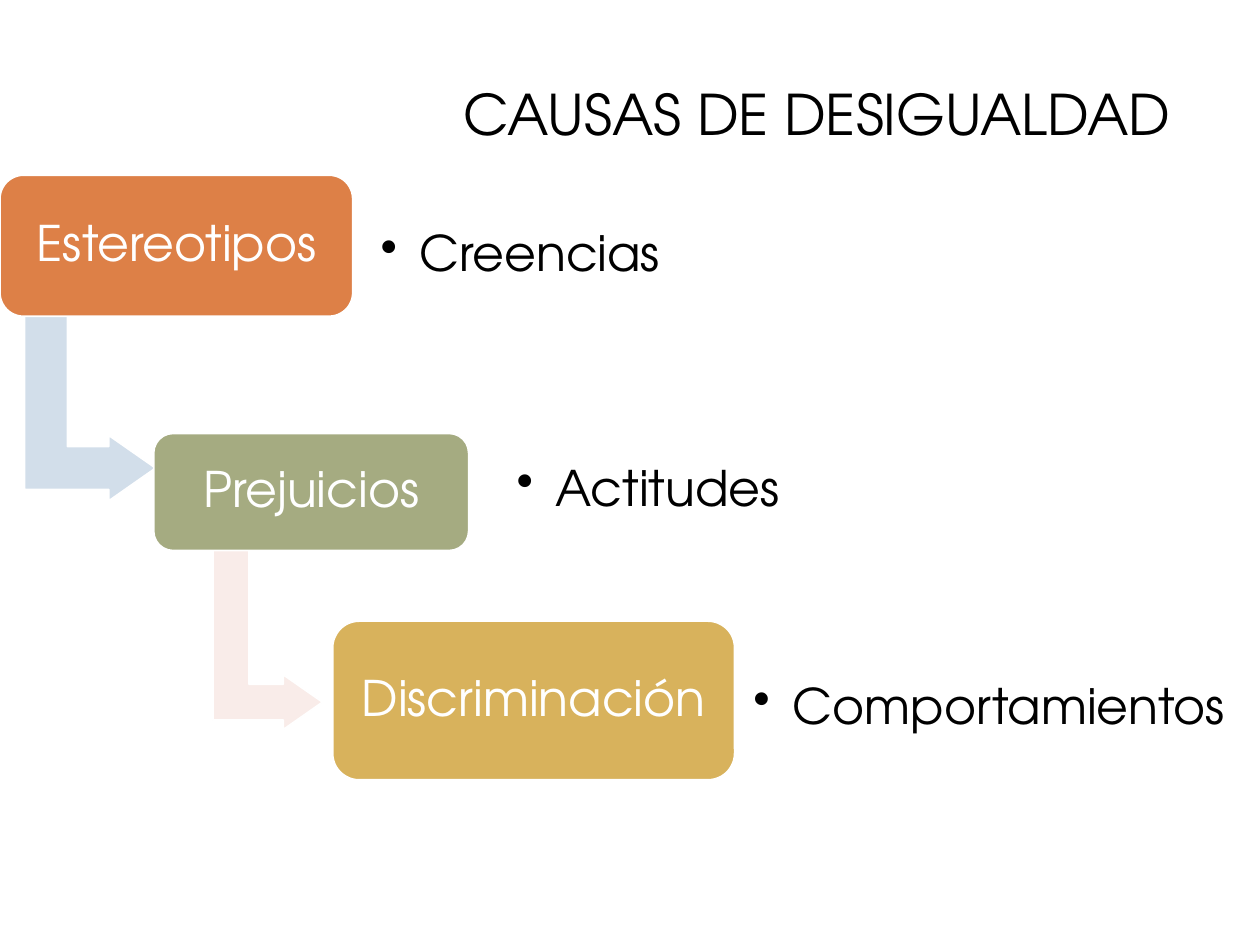
import pptx
import pptx.util
from pptx.dml.color import RGBColor
from pptx.enum.shapes import MSO_SHAPE
from pptx.enum.text import MSO_ANCHOR, PP_ALIGN
from pptx.oxml.xmlchemy import OxmlElement

Inches = pptx.util.Inches
Pt = pptx.util.Pt

FONT = "TeX Gyre Adventor"
BLACK = RGBColor(0x00, 0x00, 0x00)
WHITE = RGBColor(0xFF, 0xFF, 0xFF)
ORANGE = RGBColor(0xDD, 0x80, 0x47)
GREEN = RGBColor(0xA5, 0xAB, 0x81)
GOLD = RGBColor(0xD8, 0xB2, 0x5C)
PALE_BLUE = RGBColor(0xD2, 0xDE, 0xEA)
PALE_PINK = RGBColor(0xF9, 0xEC, 0xE9)

# Content: places are left, top, width, height in inches
TITLE = ("CAUSAS DE DESIGUALDAD", (3.58, 0.58, 6.22, 0.64))
STEPS = [
    ("Estereotipos", ORANGE, (0, 1.39, 2.8, 1.12),
     "Creencias", (2.9, 1.32, 2.69, 1.42)),
    ("Prejuicios", GREEN, (1.22, 3.44, 2.5, 0.93),
     "Actitudes", (3.98, 3.18, 3.04, 1.42)),
    ("Discriminación", GOLD, (2.64, 4.93, 3.19, 1.26),
     "Comportamientos", (5.86, 4.91, 4.14, 1.42)),
]
ARROWS = [
    (PALE_BLUE, (-0.03, 2.71, 1.49, 1.04)),
    (PALE_PINK, (1.38, 4.61, 1.49, 0.87)),
]


def add_bullet(paragraph):
    properties = paragraph._p.get_or_add_pPr()
    properties.set("marL", str(Inches(0.31)))
    properties.set("indent", str(-Inches(0.31)))
    bullet = OxmlElement("a:buChar")
    bullet.set("char", "•")
    properties.append(bullet)


def write(box, text, size=28, color=BLACK, align=PP_ALIGN.LEFT,
          anchor=MSO_ANCHOR.MIDDLE, inset=0.12, spacing=0.9, bullet=False):
    frame = box.text_frame
    frame.word_wrap = True
    frame.vertical_anchor = anchor
    if inset is not None:
        frame.margin_left = frame.margin_right = Inches(inset)
        frame.margin_top = frame.margin_bottom = Inches(inset)
    paragraph = frame.paragraphs[0]
    paragraph.alignment = align
    paragraph.line_spacing = spacing
    if bullet:
        paragraph.level = 1
        add_bullet(paragraph)
    span = paragraph.add_run()
    span.text = text
    span.font.name = FONT
    span.font.size = Pt(size)
    span.font.color.rgb = color


def add_shape(page, kind, place, fill, adjustments):
    shape = page.shapes.add_shape(kind, *map(Inches, place))
    shape.shadow.inherit = False
    shape.fill.solid()
    shape.fill.fore_color.rgb = fill
    shape.line.color.rgb = WHITE
    shape.line.width = Pt(1)
    for index, value in enumerate(adjustments):
        shape.adjustments[index] = value
    return shape


def add_text(page, text, place, **formats):
    box = page.shapes.add_textbox(*map(Inches, place))
    write(box, text, **formats)


deck = pptx.Presentation()
deck.slide_width, deck.slide_height = Inches(10), Inches(7.5)
page = deck.slides.add_slide(deck.slide_layouts[6])

# Arrows leading down from one step to the next
for color, place in ARROWS:
    arrow = add_shape(page, MSO_SHAPE.BENT_UP_ARROW, place, color,
                      (0.328, 0.25, 0.358))
    arrow.rotation = 90

# Steps, each with its bullet at the right
for name, color, place, detail, detail_place in STEPS:
    step = add_shape(page, MSO_SHAPE.ROUNDED_RECTANGLE, place, color, (0.167,))
    write(step, name, color=WHITE, align=PP_ALIGN.CENTER)
    add_text(page, detail, detail_place, bullet=True)

# Title
add_text(page, *TITLE, size=32, anchor=MSO_ANCHOR.TOP, inset=None, spacing=1.0)

deck.save("out.pptx")
